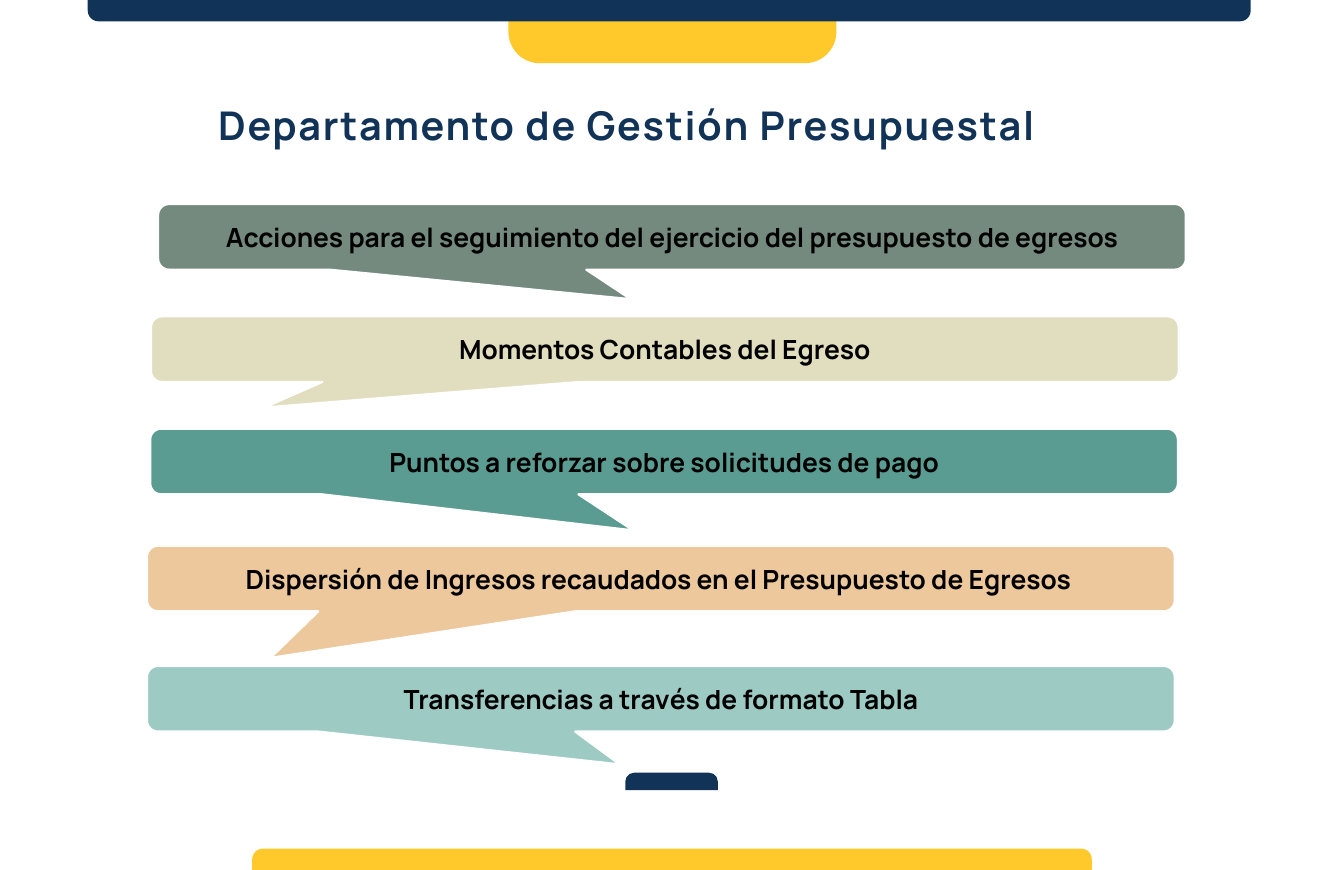
from pptx import Presentation
from pptx import util as u
from pptx.dml.color import RGBColor
from pptx.enum import shapes, text

# Grid: 17 columns by 11 rows, one inch each
COLS, ROWS = 17, 11
FONT = "Manrope"
HUES = {
    "navy": "123358", "gold": "FFC82B", "white": "FFFFFF", "black": "000000",
    "moss": "748A7F", "sand": "E1DDBF", "teal": "5A9C91",
    "peach": "ECC89C", "mint": "9DCBC4",
}

# Topics: text, colour, left, top, pointer x and y
TOPICS = [
    ("Acciones para el seguimiento del ejercicio del presupuesto de egresos",
     "moss", 2, 2.58, -0.04, 0.95),
    ("Momentos Contables del Egreso", "sand", 1.91, 4, -0.39, 0.89),
    ("Puntos a reforzar sobre solicitudes de pago",
     "teal", 1.9, 5.42, -0.03, 1.05),
    ("Dispersión de Ingresos recaudados en el Presupuesto de Egresos ",
     "peach", 1.86, 6.9, -0.38, 1.21),
    ("Transferencias a través de formato Tabla",
     "mint", 1.86, 8.42, -0.04, 1),
]


def hue(name):
    return RGBColor.from_string(HUES[name])


def grid(*cells):
    return [u.Inches(cell) for cell in cells]


def style(para, size, name):
    font = para.font
    font.name, font.size, font.bold = FONT, u.Pt(size), True
    font.color.rgb = hue(name)


def block(slide, kind, box, name):
    shape = slide.shapes.add_shape(kind, *grid(*box))
    shape.shadow.inherit = False
    shape.fill.solid()
    shape.fill.fore_color.rgb = hue(name)
    shape.line.fill.background()
    return shape


def tab(slide, box, name, hangs):
    """A bar at a slide edge, round at the bottom if it hangs, else at the top."""
    bar = block(slide, shapes.MSO_SHAPE.ROUND_2_SAME_RECTANGLE, box, name)
    bar.adjustments[0], bar.adjustments[1] = (0, 0.5) if hangs else (0.5, 0)


def title(slide, words):
    box = slide.shapes.add_textbox(*grid(2.76, 1.27, 11.5, 0.62))
    frame = box.text_frame
    frame.word_wrap = True
    frame.margin_left = frame.margin_right = frame.margin_bottom = 0
    frame.margin_top = u.Inches(0.01)
    para = frame.paragraphs[0]
    run = para.add_run()
    run.text = words
    run.font._element.set("spc", "160")  # letter spacing
    style(para, 36, "navy")


def callout(slide, words, name, left, top, tip_x, tip_y):
    kind = shapes.MSO_SHAPE.ROUNDED_RECTANGULAR_CALLOUT
    shape = block(slide, kind, (left, top, 13, 0.83), name)
    shape.adjustments[0], shape.adjustments[1] = tip_x, tip_y
    shape.line.color.rgb = hue("white")
    shape.line.width = u.Pt(2)
    frame = shape.text_frame
    frame.word_wrap = True
    frame.vertical_anchor = text.MSO_ANCHOR.MIDDLE
    para = frame.paragraphs[0]
    para.text = words
    para.alignment = text.PP_ALIGN.CENTER
    style(para, 24, "black")


def main():
    deck = Presentation()
    deck.slide_width, deck.slide_height = grid(COLS, ROWS)
    slide = deck.slides.add_slide(deck.slide_layouts[6])

    # Edge bars
    tab(slide, (7.91, 9.77, 1.17, 0.22), "navy", False)
    tab(slide, (6.43, 0, 4.15, 0.8), "gold", True)
    tab(slide, (1.11, 0, 14.71, 0.27), "navy", True)
    tab(slide, (3.19, ROWS - 0.27, 10.62, 0.27), "gold", False)

    # Title and topics
    title(slide, "Departamento de Gestión Presupuestal")
    for topic in TOPICS:
        callout(slide, *topic)

    deck.save("out.pptx")


if __name__ == "__main__":
    main()
